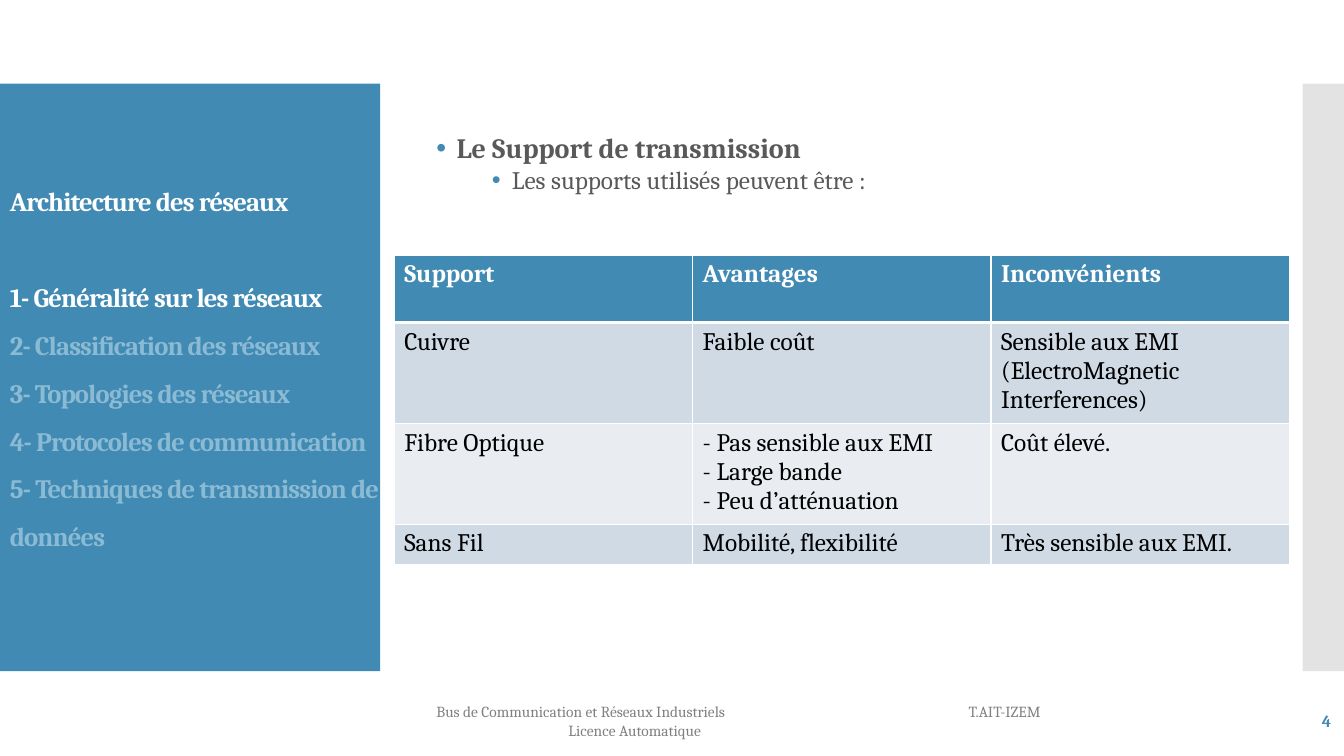
from dataclasses import dataclass

from lxml import etree
from pptx import Presentation
from pptx.dml.color import RGBColor
from pptx.enum.shapes import MSO_SHAPE
from pptx.enum.text import MSO_ANCHOR, PP_ALIGN
from pptx.oxml.ns import qn
from pptx.util import Inches, Pt

RECT = MSO_SHAPE.RECTANGLE
TOP, MIDDLE = MSO_ANCHOR.TOP, MSO_ANCHOR.MIDDLE
RIGHT = PP_ALIGN.RIGHT


@dataclass(frozen=True)
class Theme:
    font: str = "Cambria"
    blue: str = "418AB3"
    faded: str = "8ABAD4"
    bar: str = "C8C8C8"
    white: str = "FFFFFF"
    black: str = "000000"
    body: str = "595959"
    footer: str = "808080"
    band_dark: str = "CFDAE5"
    band_light: str = "E9EDF2"
    heading_size: int = 20
    outline_size: int = 19
    text_size: int = 18
    number_size: int = 12
    footer_size: int = 11


THEME = Theme()

OUTLINE_TITLE = "Architecture des réseaux"
OUTLINE = [
    "1- Généralité sur les réseaux",
    "2- Classification des réseaux",
    "3- Topologies des réseaux",
    "4- Protocoles de communication",
    "5- Techniques de transmission de données",
]
SUPPORTS = [
    ["Support", "Avantages", "Inconvénients"],
    ["Cuivre", "Faible coût",
     "Sensible aux EMI\n(ElectroMagnetic\nInterferences)"],
    ["Fibre Optique",
     "- Pas sensible aux EMI\n- Large bande\n- Peu d’atténuation",
     "Coût élevé."],
    ["Sans Fil", "Mobilité, flexibilité", "Très sensible aux EMI."],
]
ROW_HEIGHTS = [0.67, 0.97, 0.97, 0.4]


def add_panel(slide, left, top, width, height, color, alpha=None):
    sp = slide.shapes.add_shape(
        RECT, Inches(left), Inches(top), Inches(width), Inches(height))
    sp.shadow.inherit = False
    sp.fill.solid()
    sp.fill.fore_color.rgb = RGBColor.from_string(color)
    sp.line.fill.background()
    if alpha is not None:
        clr = sp._element.spPr.find(qn("a:solidFill"))[0]
        etree.SubElement(clr, qn("a:alpha")).set("val", str(alpha * 1000))


def add_text_frame(slide, left, top, width, height, anchor=MIDDLE):
    box = slide.shapes.add_textbox(
        Inches(left), Inches(top), Inches(width), Inches(height))
    tf = box.text_frame
    tf.word_wrap = True
    tf.vertical_anchor = anchor
    return tf


def format_runs(p, size, color, bold=False, spacing=None):
    for r in p.runs:
        r.font.name = THEME.font
        r.font.size = Pt(size)
        r.font.bold = bold
        r.font.color.rgb = RGBColor.from_string(color)
        if spacing is not None:
            r.font._element.set("spc", str(round(spacing * 100)))


def set_indent(p, margin, hanging=0.0):
    pPr = p._p.get_or_add_pPr()
    pPr.set("marL", str(Inches(margin)))
    pPr.set("indent", str(Inches(-hanging)))
    return pPr


def add_bullet(p, margin):
    pPr = set_indent(p, margin, 0.2)
    clr = etree.SubElement(pPr, qn("a:buClr"))
    etree.SubElement(clr, qn("a:srgbClr")).set("val", THEME.blue)
    etree.SubElement(pPr, qn("a:buFont")).set("typeface", "Arial")
    etree.SubElement(pPr, qn("a:buChar")).set("char", "•")


def add_tab(p, position):
    tabs = etree.SubElement(p._p.get_or_add_pPr(), qn("a:tabLst"))
    tab = etree.SubElement(tabs, qn("a:tab"))
    tab.set("pos", str(Inches(position)))
    tab.set("algn", "l")


def set_borders(cell, widths):
    tcPr = cell._tc.get_or_add_tcPr()
    for side, width in widths.items():
        ln = etree.SubElement(tcPr, qn(f"a:ln{side}"))
        ln.set("w", str(Pt(width)))
        fill = etree.SubElement(ln, qn("a:solidFill"))
        etree.SubElement(fill, qn("a:srgbClr")).set("val", THEME.white)


def add_outline(slide):
    tf = add_text_frame(slide, 0, 1.23, 3.92, 5.03, TOP)
    tf.margin_top = Inches(0.61)
    p = tf.paragraphs[0]
    p.text = OUTLINE_TITLE
    format_runs(p, THEME.outline_size, THEME.white, True, -0.6)
    for i, entry in enumerate(OUTLINE):
        p = tf.add_paragraph()
        p.text = entry
        p.line_spacing = 1.5
        if i == 0:
            p.space_before = Pt(34)
        color = THEME.white if i == 0 else THEME.faded
        format_runs(p, THEME.outline_size, color, True, -0.6)


def add_intro(slide):
    tf = add_text_frame(slide, 4.23, 0.47, 8, 2.33)
    heading = tf.paragraphs[0]
    heading.text = "Le Support de transmission"
    heading.line_spacing = 0.9
    add_bullet(heading, 0.2)
    format_runs(heading, THEME.heading_size, THEME.body, True)
    detail = tf.add_paragraph()
    detail.text = "Les supports utilisés peuvent être :"
    detail.level = 1
    detail.line_spacing = 0.9
    detail.space_before = detail.space_after = Pt(2.5)
    add_bullet(detail, 0.75)
    format_runs(detail, THEME.text_size, THEME.body)


def add_support_table(slide):
    table = slide.shapes.add_table(
        len(SUPPORTS), len(SUPPORTS[0]), Inches(3.91), Inches(2.53),
        Inches(8.88), Inches(sum(ROW_HEIGHTS))).table
    for col in table.columns:
        col.width = Inches(2.96)
    for i, (row, height) in enumerate(zip(SUPPORTS, ROW_HEIGHTS)):
        table.rows[i].height = Inches(height)
        header = i == 0
        band = THEME.band_dark if i % 2 else THEME.band_light
        for j, text in enumerate(row):
            cell = table.cell(i, j)
            cell.text_frame.text = text
            set_borders(cell, {"L": 1, "R": 1, "T": 3 if i == 1 else 1,
                               "B": 3 if header else 1})
            cell.fill.solid()
            cell.fill.fore_color.rgb = RGBColor.from_string(
                THEME.blue if header else band)
            for p in cell.text_frame.paragraphs:
                format_runs(p, THEME.text_size,
                            THEME.white if header else THEME.black, header)


def add_footer(slide):
    tf = add_text_frame(slide, 4.23, 6.95, 6.46, 0.4)
    course = tf.paragraphs[0]
    course.text = "Bus de Communication et Réseaux Industriels\tT.AIT-IZEM"
    add_tab(course, 5.28)
    degree = tf.add_paragraph()
    degree.text = "Licence Automatique"
    set_indent(degree, 1.31)
    for p in (course, degree):
        format_runs(p, THEME.footer_size, THEME.footer)

    number = add_text_frame(slide, 11.63, 6.95, 1.67, 0.4).paragraphs[0]
    number.text = "4"
    number.alignment = RIGHT
    format_runs(number, THEME.number_size, THEME.blue, True)


def main():
    prs = Presentation()
    prs.slide_width, prs.slide_height = Inches(13.33), Inches(7.5)
    slide = prs.slides.add_slide(prs.slide_layouts[6])

    # Side panels
    add_panel(slide, 0, 0.83, 3.77, 5.83, THEME.blue)
    add_panel(slide, 12.92, 0.83, 0.41, 5.83, THEME.bar, alpha=50)

    # Content
    add_intro(slide)
    add_footer(slide)
    add_support_table(slide)
    add_outline(slide)

    prs.save("out.pptx")


if __name__ == "__main__":
    main()
